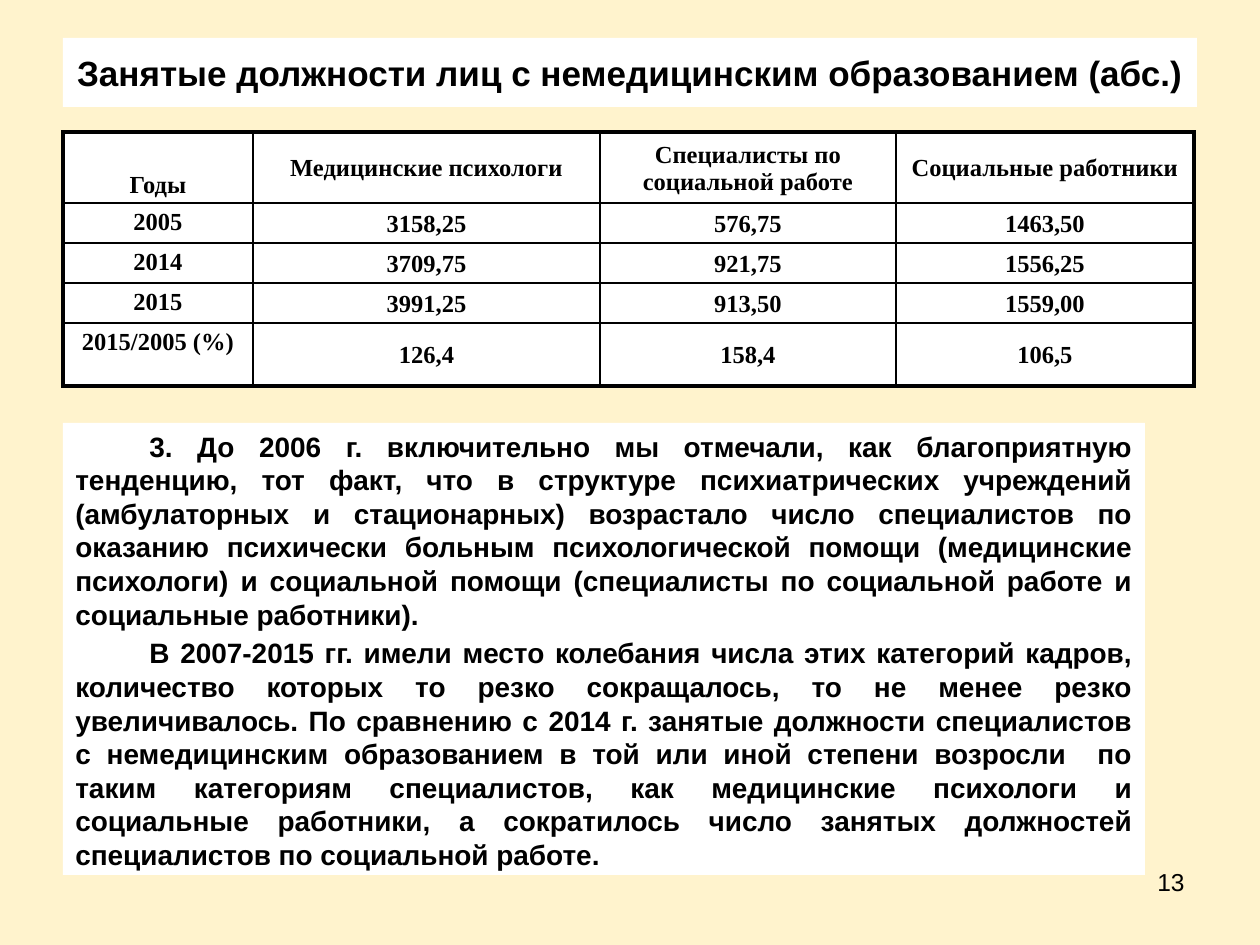
from dataclasses import dataclass

from lxml import etree
from pptx import Presentation
from pptx.dml.color import RGBColor
from pptx.enum.text import MSO_ANCHOR, PP_ALIGN
from pptx.oxml.ns import qn
from pptx.util import Emu, Pt

CENTER, JUSTIFY, RIGHT = PP_ALIGN.CENTER, PP_ALIGN.JUSTIFY, PP_ALIGN.RIGHT
TOP, MIDDLE, BOTTOM = MSO_ANCHOR.TOP, MSO_ANCHOR.MIDDLE, MSO_ANCHOR.BOTTOM
EMU_PER_PX = 914400 / 126


@dataclass(frozen=True)
class Theme:
    background: str = "FFF3CD"
    panel: str = "FFFFFF"
    ink: str = "000000"
    text_font: str = "Arial"
    table_font: str = "Times New Roman"
    title_size: int = 20
    body_size: int = 16
    small_size: int = 14
    outer_border: float = 2.25
    inner_border: float = 1


THEME = Theme()

TITLE = "Занятые должности лиц с немедицинским образованием (абс.)"
STAFF_ROWS = [
    ["Годы", "Медицинские психологи", "Специалисты по социальной работе", "Социальные работники"],
    ["2005", "3158,25", "576,75", "1463,50"],
    ["2014", "3709,75", "921,75", "1556,25"],
    ["2015", "3991,25", "913,50", "1559,00"],
    ["2015/2005 (%)", "126,4", "158,4", "106,5"],
]
COLUMN_WIDTHS = [190, 347, 296, 298]
ROW_HEIGHTS = [71, 40, 40, 40, 63]
CONCLUSIONS = [
    "3. До 2006 г. включительно мы отмечали, как благоприятную тенденцию, тот факт, "
    "что в структуре психиатрических учреждений (амбулаторных и стационарных) возрастало "
    "число специалистов по оказанию психически больным психологической помощи "
    "(медицинские психологи) и социальной помощи (специалисты по социальной работе "
    "и социальные работники).",
    "В 2007-2015 гг. имели место колебания числа этих категорий кадров, количество "
    "которых то резко сокращалось, то не менее резко увеличивалось. По сравнению с 2014 г. "
    "занятые должности специалистов с немедицинским образованием в той или иной степени "
    "возросли  по таким категориям специалистов, как медицинские психологи и социальные "
    "работники, а сократилось число занятых должностей специалистов по социальной работе.",
]


def px(length):
    return Emu(round(length * EMU_PER_PX))


def paint(fill, color):
    fill.solid()
    fill.fore_color.rgb = RGBColor.from_string(color)


def format_text(frame, size, align, font=THEME.text_font, bold=True):
    for paragraph in frame.paragraphs:
        paragraph.alignment = align
        for run in paragraph.runs:
            run.font.name = font
            run.font.size = Pt(size)
            run.font.bold = bold
            run.font.color.rgb = RGBColor.from_string(THEME.ink)


def add_text(slide, box, text, size, align, anchor=TOP, panel=None, bold=True):
    text_box = slide.shapes.add_textbox(*map(px, box))
    if panel:
        paint(text_box.fill, panel)
    frame = text_box.text_frame
    frame.word_wrap = True
    frame.vertical_anchor = anchor
    frame.text = text
    format_text(frame, size, align, bold=bold)
    return frame


def set_borders(cell, widths):
    properties = cell._tc.get_or_add_tcPr()
    for side, width in widths.items():
        line = etree.SubElement(properties, qn(f"a:ln{side}"), w=str(Pt(width)))
        fill = etree.SubElement(line, qn("a:solidFill"))
        etree.SubElement(fill, qn("a:srgbClr"), val=THEME.ink)


def add_staff_table(slide, left, top):
    last_row, last_column = len(ROW_HEIGHTS) - 1, len(COLUMN_WIDTHS) - 1
    frame = slide.shapes.add_table(
        len(ROW_HEIGHTS), len(COLUMN_WIDTHS),
        px(left), px(top), px(sum(COLUMN_WIDTHS)), px(sum(ROW_HEIGHTS)))
    table = frame.table
    table.first_row = table.horz_banding = False
    for column, width in zip(table.columns, COLUMN_WIDTHS):
        column.width = px(width)
    for row, height in zip(table.rows, ROW_HEIGHTS):
        row.height = px(height)

    for r, values in enumerate(STAFF_ROWS):
        for c, value in enumerate(values):
            cell = table.cell(r, c)
            cell.text_frame.text = value
            format_text(cell.text_frame, THEME.small_size, CENTER, THEME.table_font)
            cell.margin_top, cell.margin_bottom = px(6), px(4)
            # The year column hangs from the top, with its heading at the bottom
            if c > 0:
                cell.vertical_anchor = MIDDLE
            else:
                cell.vertical_anchor = BOTTOM if r == 0 else TOP
            on_edge = {"L": c == 0, "R": c == last_column, "T": r == 0, "B": r == last_row}
            set_borders(cell, {side: THEME.outer_border if edge else THEME.inner_border
                               for side, edge in on_edge.items()})
            paint(cell.fill, THEME.panel)


def add_conclusions(slide, box):
    frame = add_text(slide, box, "\n".join(CONCLUSIONS), THEME.body_size, JUSTIFY,
                     panel=THEME.panel)
    for paragraph in frame.paragraphs:
        paragraph.space_before = Pt(3)
        paragraph._p.get_or_add_pPr().set("indent", str(px(74)))


def main():
    presentation = Presentation()
    presentation.slide_width, presentation.slide_height = px(1260), px(945)
    slide = presentation.slides.add_slide(presentation.slide_layouts[6])
    paint(slide.background.fill, THEME.background)

    # Heading
    add_text(slide, (63, 38, 1134, 69), TITLE, THEME.title_size, CENTER, MIDDLE, THEME.panel)
    # Conclusions and page number
    add_conclusions(slide, (63, 423, 1082, 452))
    add_text(slide, (903, 861, 294, 65), "13", THEME.small_size, RIGHT, bold=False)
    # Posts by year
    add_staff_table(slide, 63, 132)

    presentation.save("out.pptx")


if __name__ == "__main__":
    main()
